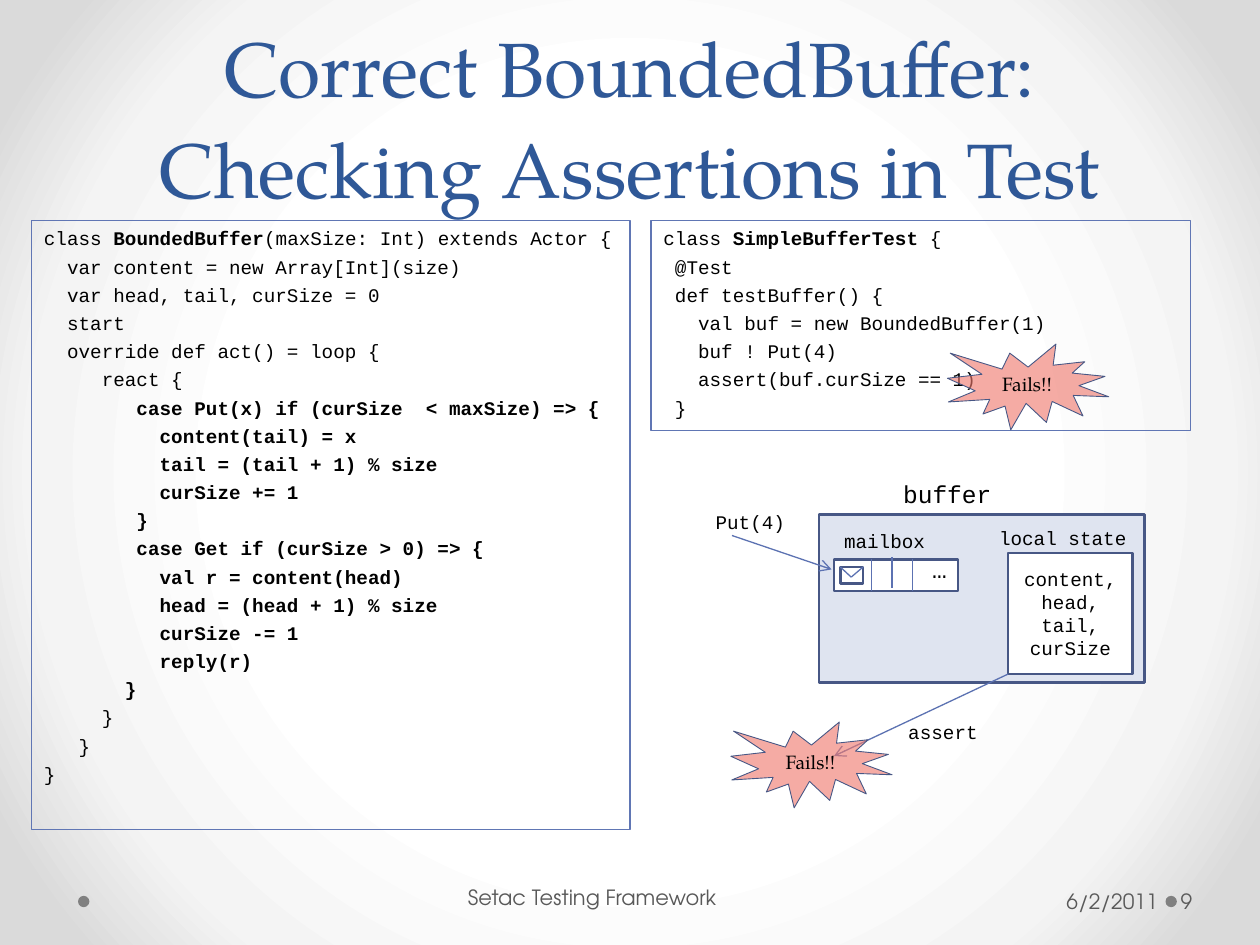
from lxml import etree
from pptx import Presentation
from pptx.dml.color import RGBColor
from pptx.enum.shapes import MSO_CONNECTOR, MSO_SHAPE
from pptx.enum.text import MSO_ANCHOR, PP_ALIGN
from pptx.oxml import parse_xml
from pptx.oxml.ns import nsdecls, qn
from pptx.util import Pt

RECT, OVAL, BURST = MSO_SHAPE.RECTANGLE, MSO_SHAPE.OVAL, MSO_SHAPE.EXPLOSION1
STRAIGHT = MSO_CONNECTOR.STRAIGHT
TOP, MIDDLE, BOTTOM = MSO_ANCHOR.TOP, MSO_ANCHOR.MIDDLE, MSO_ANCHOR.BOTTOM
LEFT, CENTER, RIGHT = PP_ALIGN.LEFT, PP_ALIGN.CENTER, PP_ALIGN.RIGHT

BLACK = RGBColor(0x00, 0x00, 0x00)
WHITE = RGBColor(0xFF, 0xFF, 0xFF)
GRAY = RGBColor(0x80, 0x80, 0x80)
DARK = RGBColor(0x59, 0x59, 0x59)
TITLE = RGBColor(0x2F, 0x58, 0x97)
FRAME = RGBColor(0x60, 0x76, 0xB4)
EDGE = RGBColor(0x47, 0x57, 0x85)
WIRE = RGBColor(0x5C, 0x72, 0xB2)
PALE = RGBColor(0xDF, 0xE4, 0xF0)
CORAL = RGBColor(0xEF, 0x79, 0x6D)

MONO = {"name": "Courier New", "size": Pt(11)}
LABEL = {"name": "Courier New", "size": Pt(14)}
SERIF = {"name": "TeX Gyre Pagella", "size": Pt(11)}
HEAD = {"name": "TeX Gyre Pagella", "size": Pt(44)}
FOOT = {"name": "TeX Gyre Adventor", "size": Pt(12)}

# Text between asterisks is bold.
BUFFER = """class *BoundedBuffer*(maxSize: Int) extends Actor {
  var content = new Array[Int](size)
  var head, tail, curSize = 0
  start
  override def act() = loop {
     react {
*        case Put(x) if (curSize  < maxSize) => {*
*          content(tail) = x*
*          tail = (tail + 1) % size*
*          curSize += 1*
*        }*
*        case Get if (curSize > 0) => {*
*          val r = content(head)*
*          head = (head + 1) % size*
*          curSize -= 1*
*          reply(r)*
*       }*
     }
   }
}"""
TEST = """class *SimpleBufferTest* {
 @Test
 def testBuffer() {
   val buf = new BoundedBuffer(1)
   buf ! Put(4)
   assert(buf.curSize == 1)
 }"""


def write(shape, text, style, color=BLACK, align=LEFT, anchor=TOP, gap=0):
    """Fill a shape with lines of text; gap is the space between lines."""
    frame = shape.text_frame
    frame.word_wrap = True
    frame.vertical_anchor = anchor
    for row, line in enumerate(text.split("\n")):
        para = frame.add_paragraph() if row else frame.paragraphs[0]
        para.alignment = align
        para.space_before = Pt(gap if row else 0)
        for part, piece in enumerate(line.split("*")):
            if piece:
                run = para.add_run()
                run.text = piece
                run.font.bold = part % 2 == 1
                run.font.color.rgb = color
                for key, value in style.items():
                    setattr(run.font, key, value)


def draw(kind, place, fill=None, edge=None, width=0.75):
    shape = slide.shapes.add_shape(kind, *map(Pt, place))
    shape.shadow.inherit = False
    if fill is None:
        shape.fill.background()
    else:
        shape.fill.solid()
        shape.fill.fore_color.rgb = fill
    if edge is None:
        shape.line.fill.background()
    else:
        shape.line.color.rgb = edge
        shape.line.width = Pt(width)
    return shape


deck = Presentation()
deck.slide_width, deck.slide_height = Pt(720), Pt(540)
slide = deck.slides.add_slide(deck.slide_layouts[5])

# Background: white centre that darkens to the corners
slide.background.fill.gradient()
grad = slide.element.find(".//" + qn("a:gradFill"))
stops = "".join(
    f'<a:gs pos="{pos}000"><a:srgbClr val="{tone}"/></a:gs>'
    for pos, tone in [(50, "FFFFFF"), (76, "F4F4F4"), (92, "DADADA")])
grad.getparent().replace(grad, parse_xml(
    f'<a:gradFill {nsdecls("a")} rotWithShape="1"><a:gsLst>{stops}</a:gsLst>'
    '<a:path path="circle"><a:fillToRect l="50000" t="50000" r="50000" '
    'b="50000"/></a:path></a:gradFill>'))

# Title
title = slide.shapes.title
for key, value in {"left": 0.5, "top": 0, "width": 9, "height": 1.75}.items():
    setattr(title, key, Pt(value * 72))
write(title, "Correct BoundedBuffer: Checking Assertions in Test", HEAD,
      TITLE, CENTER, BOTTOM)
title.text_frame.paragraphs[0].line_spacing = Pt(58)

# Footer
for x in (44.6, 666):
    draw(OVAL, (x, 511.9, 6.5, 6.5), GRAY)
for text, place, align, left, right in [
    ("6/2/2011", (501, 500.4, 164.2, 28.8), RIGHT, 7.2, 3.6),
    ("Setac Testing Framework", (228.2, 498.2, 224, 28.8), CENTER, 3.6, 7.2),
    ("9", (672.5, 500.4, 44, 28.8), LEFT, 2.2, 3.6),
]:
    box = slide.shapes.add_textbox(*map(Pt, place))
    write(box, text, FOOT, DARK, align, MIDDLE)
    box.text_frame.margin_left = Pt(left)
    box.text_frame.margin_right = Pt(right)

# Code panels
for code, place in [(BUFFER, (18, 126, 342, 348)), (TEST, (372, 126, 308.5, 120))]:
    write(draw(RECT, place, edge=FRAME), code, MONO, gap=2.9)

# Buffer with its mailbox, envelope and local state
draw(RECT, (468, 294, 186, 96), PALE, EDGE, 1.5)
draw(RECT, (476.6, 319.7, 70.8, 18), WHITE, EDGE, 1.5)
draw(RECT, (480.2, 324, 13, 9.4), WHITE, EDGE, 1.5)
state = draw(RECT, (576, 316, 71.3, 69.2), WHITE, EDGE, 1.5)
write(state, "content, head, tail, curSize", MONO, align=CENTER, anchor=MIDDLE)

# Mailbox slots, envelope flap and arrows
for ends, arrow in [
    ((498.2, 319.7, 498.2, 337.7), False),
    ((509.8, 318.2, 509.8, 336.2), False),
    ((521.3, 319.7, 521.3, 337.7), False),
    ((486.4, 329.8, 480.2, 324), False),
    ((486.4, 329.8, 493.2, 324), False),
    ((576, 385.2, 476.6, 432), True),
    ((418.3, 306, 475.2, 325.4), True),
]:
    wire = slide.shapes.add_connector(STRAIGHT, *map(Pt, ends))
    wire.line.color.rgb = WIRE
    wire.line.width = Pt(0.75)
    if arrow:
        etree.SubElement(wire.line._get_or_add_ln(), qn("a:tailEnd"), type="arrow")
    etree.SubElement(wire._element.spPr, qn("a:effectLst"))

# Labels
for text, place, style in [
    ("buffer", (509, 270, 92.2, 24.5), LABEL),
    ("…", (525.6, 313.2, 26, 24.5), LABEL),
    ("Put(4)", (401.8, 288, 59, 20.9), MONO),
    ("mailbox", (475.2, 298.8, 72.7, 20.9), MONO),
    ("local state", (563.8, 297.4, 90.7, 20.9), MONO),
    ("assert", (511.9, 408.2, 59, 20.9), MONO),
]:
    write(slide.shapes.add_textbox(*map(Pt, place)), text, style)

# Failure bursts, see-through
for x, y in [(541.4, 196.6), (417.6, 412.6)]:
    burst = draw(BURST, (x, y, 92.2, 49), CORAL, EDGE, 0.5)
    tint = burst._element.spPr.find(qn("a:solidFill"))[0]
    etree.SubElement(tint, qn("a:alpha"), val="62000")
    write(burst, "Fails!!", SERIF, align=CENTER, anchor=MIDDLE)

deck.save("out.pptx")
